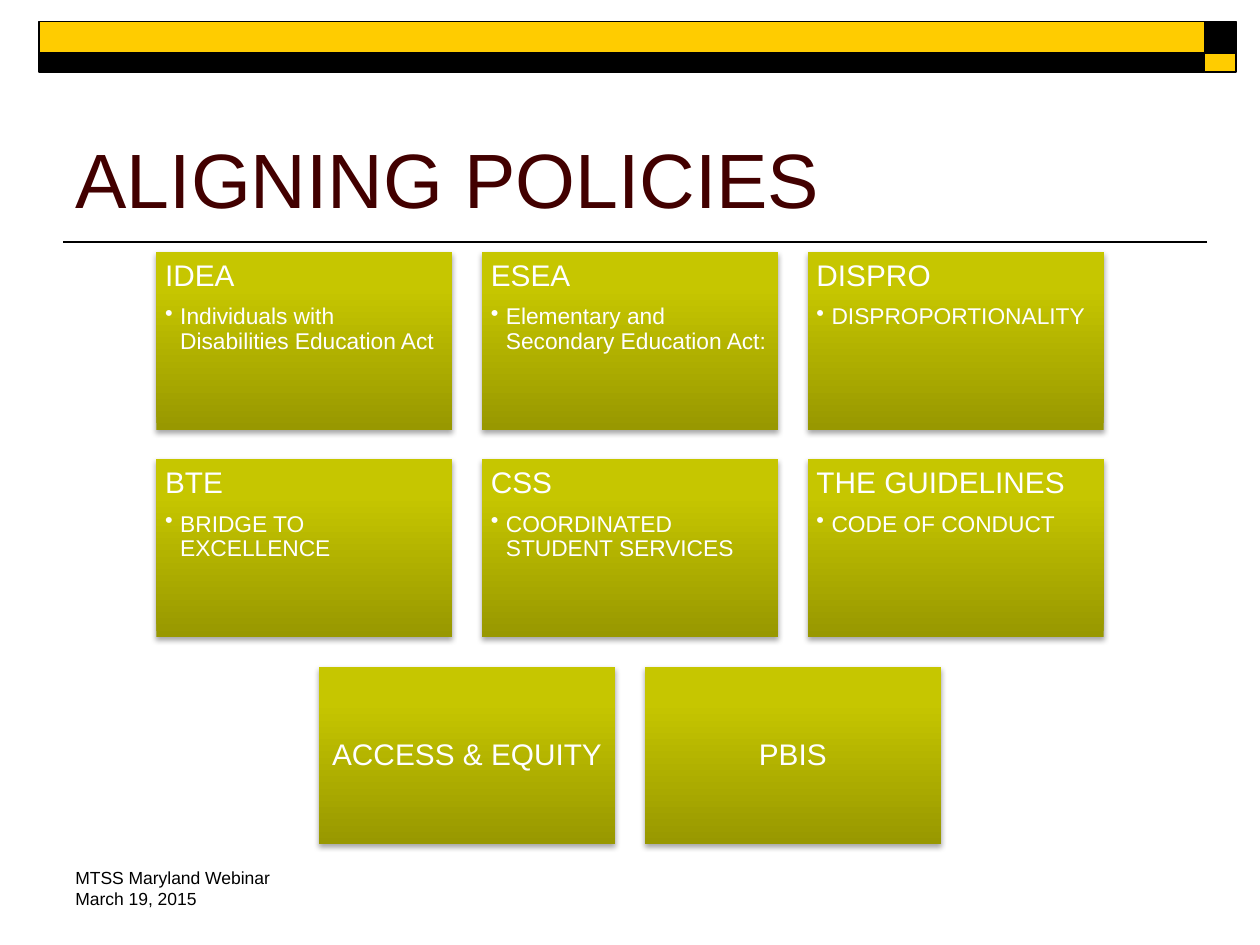
import copy
import pptx
import pptx.dml.color
import pptx.enum.shapes
import pptx.enum.text
import pptx.oxml
import pptx.oxml.ns
import pptx.util

TITLE = "ALIGNING POLICIES"
FOOTER = "MTSS Maryland Webinar March 19, 2015"
POLICY_ROWS = [
    [
        ("IDEA", "Individuals with Disabilities Education Act"),
        ("ESEA", "Elementary and Secondary Education Act:"),
        ("DISPRO", "DISPROPORTIONALITY"),
    ],
    [
        ("BTE", "BRIDGE TO EXCELLENCE"),
        ("CSS", "COORDINATED STUDENT SERVICES"),
        ("THE GUIDELINES", "CODE OF CONDUCT"),
    ],
    [("ACCESS & EQUITY", None), ("PBIS", None)],
]
BLACK, GOLD, MAROON, WHITE = "000000", "FFCC00", "420000", "FFFFFF"
GRADIENT = [(0, "989800"), (0.8, "C6C600"), (1, "C7C700")]
BAND_COLUMNS = [(0.31, 9.25), (9.56, 0.25)]
BAND_ROWS = [(0.17, 0.25, (GOLD, BLACK)), (0.42, 0.15, (BLACK, GOLD))]
SLIDE_WIDTH, SLIDE_HEIGHT = 10, 7.5
CARD_WIDTH, CARD_HEIGHT, GAP, GRID_TOP = 2.35, 1.41, 0.235, 2
INSET = 0.07
BULLET_INDENT = 0.12
NAMESPACE = pptx.oxml.ns.nsdecls("a")
SHADOW = (
    f'<a:effectLst {NAMESPACE}><a:outerShdw blurRad="39370" dist="22860" dir="5400000" '
    'rotWithShape="0"><a:srgbClr val="000000"><a:alpha val="35000"/></a:srgbClr>'
    "</a:outerShdw></a:effectLst>"
)

inches = pptx.util.Inches
points = pptx.util.Pt
anchors = pptx.enum.text.MSO_ANCHOR
alignments = pptx.enum.text.PP_ALIGN


def color(value):
    return pptx.dml.color.RGBColor.from_string(value)


def add_run(paragraph, text, size, value):
    run = paragraph.add_run()
    run.text = text
    run.font.name = "Arial"
    run.font.size = points(size)
    run.font.color.rgb = color(value)


def add_rectangle(slide, left, top, width, height):
    shape = slide.shapes.add_shape(
        pptx.enum.shapes.MSO_SHAPE.RECTANGLE,
        inches(left), inches(top), inches(width), inches(height),
    )
    shape.shadow.inherit = False
    return shape


def add_band(slide):
    for top, height, colors in BAND_ROWS:
        for (left, width), value in zip(BAND_COLUMNS, colors):
            shape = add_rectangle(slide, left, top, width, height)
            shape.fill.solid()
            shape.fill.fore_color.rgb = color(value)
            shape.line.color.rgb = color(BLACK)
            shape.line.width = points(1)


def add_rule(slide):
    rule = slide.shapes.add_connector(
        pptx.enum.shapes.MSO_CONNECTOR.STRAIGHT,
        inches(9.58), inches(1.92), inches(0.5), inches(1.92),
    )
    rule.line.color.rgb = color(BLACK)
    rule.line.width = points(1)
    rule._element.spPr.append(pptx.oxml.parse_xml(f"<a:effectLst {NAMESPACE}/>"))


def style_card(shape):
    shape.line.fill.background()
    shape.fill.gradient()
    shape.fill.gradient_angle = 90
    properties = shape._element.spPr
    stops = properties.find(".//" + pptx.oxml.ns.qn("a:gsLst"))
    stops.append(copy.deepcopy(stops[0]))
    for stop, (position, value) in zip(shape.fill.gradient_stops, GRADIENT):
        stop.position = position
        stop.color.rgb = color(value)
    effects = properties.find(pptx.oxml.ns.qn("a:effectLst"))
    properties.replace(effects, pptx.oxml.parse_xml(SHADOW))


def add_card(slide, left, top, heading, detail):
    shape = add_rectangle(slide, left, top, CARD_WIDTH, CARD_HEIGHT)
    style_card(shape)
    frame = shape.text_frame
    frame.word_wrap = True
    frame.margin_left = frame.margin_right = inches(INSET)
    frame.margin_top = frame.margin_bottom = inches(INSET)
    frame.vertical_anchor = anchors.TOP if detail else anchors.MIDDLE
    paragraph = frame.paragraphs[0]
    paragraph.alignment = alignments.LEFT if detail else alignments.CENTER
    paragraph.line_spacing = 0.9
    add_run(paragraph, heading, 17, WHITE)
    if detail:
        paragraph.space_after = points(7)
        bullet = frame.add_paragraph()
        bullet.level = 1
        bullet.alignment = alignments.LEFT
        bullet.line_spacing = 0.9
        properties = bullet._p.get_or_add_pPr()
        properties.set("marL", str(inches(BULLET_INDENT)))
        properties.set("indent", str(-inches(BULLET_INDENT)))
        properties.append(pptx.oxml.parse_xml(f'<a:buChar {NAMESPACE} char="•"/>'))
        add_run(bullet, detail, 13, WHITE)


def add_cards(slide):
    for row, policies in enumerate(POLICY_ROWS):
        row_width = len(policies) * (CARD_WIDTH + GAP) - GAP
        row_left = (SLIDE_WIDTH - row_width) / 2
        top = GRID_TOP + row * (CARD_HEIGHT + GAP)
        for column, (heading, detail) in enumerate(policies):
            left = row_left + column * (CARD_WIDTH + GAP)
            add_card(slide, left, top, heading, detail)


def add_title(slide):
    title = slide.shapes.title
    title.left, title.top = inches(0.5), inches(0.58)
    title.width, title.height = inches(9), inches(1.25)
    title.text_frame.vertical_anchor = anchors.BOTTOM
    paragraph = title.text_frame.paragraphs[0]
    paragraph.alignment = alignments.LEFT
    add_run(paragraph, TITLE, 44, MAROON)


def add_footer(slide):
    footer = slide.shapes.add_textbox(inches(0.5), inches(6.83), inches(1.83), inches(0.5))
    footer.text_frame.word_wrap = True
    add_run(footer.text_frame.paragraphs[0], FOOTER, 10, BLACK)


def main():
    presentation = pptx.Presentation()
    presentation.slide_width = inches(SLIDE_WIDTH)
    presentation.slide_height = inches(SLIDE_HEIGHT)
    slide = presentation.slides.add_slide(presentation.slide_layouts[5])
    add_rule(slide)
    add_band(slide)
    add_title(slide)
    add_cards(slide)
    add_footer(slide)
    presentation.save("out.pptx")


if __name__ == "__main__":
    main()
